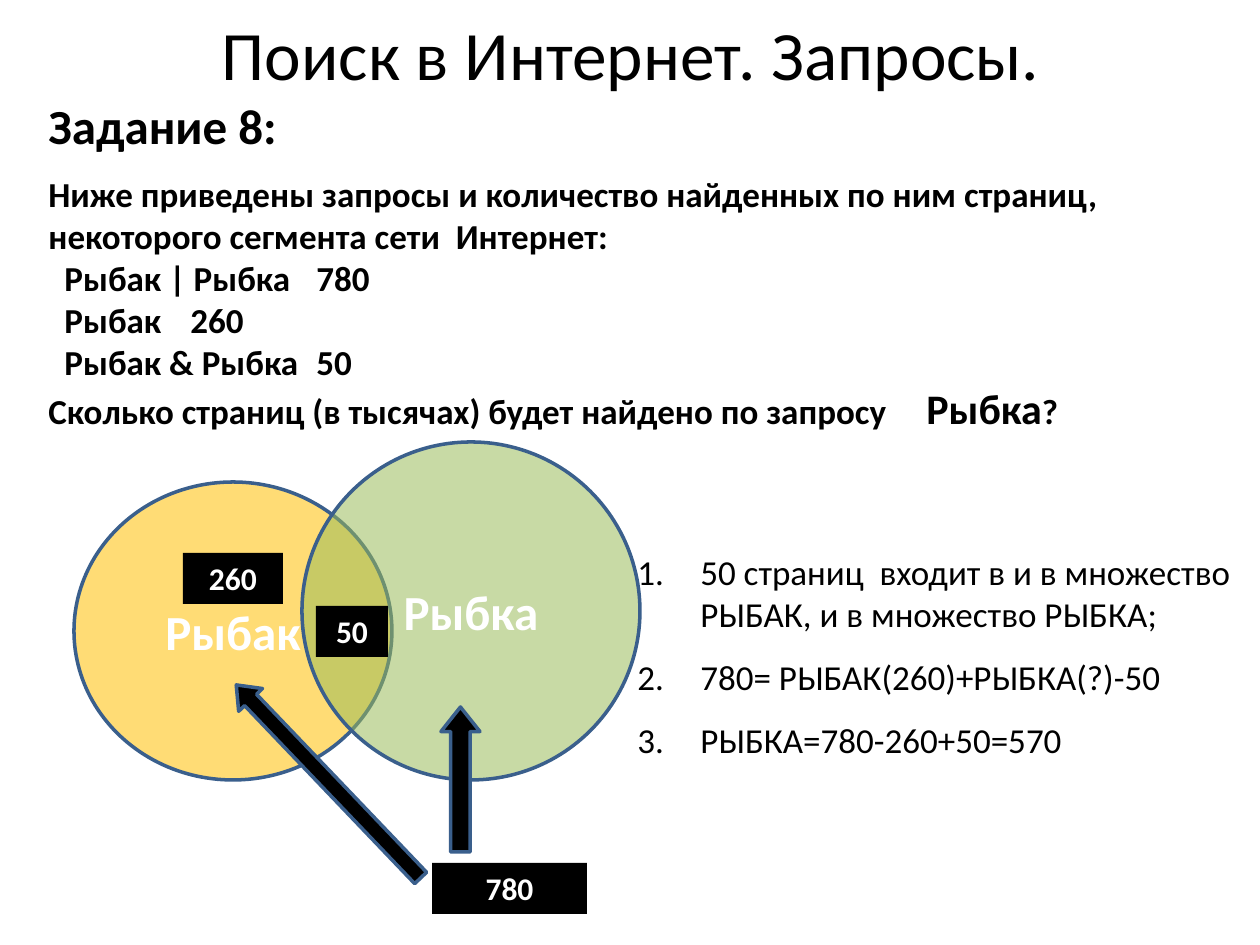
from lxml import etree
from pptx import Presentation
from pptx.dml.color import RGBColor
from pptx.enum.shapes import MSO_SHAPE
from pptx.enum.text import MSO_ANCHOR, PP_ALIGN
from pptx.oxml.ns import qn
from pptx.util import Emu, Pt

ELLIPSE, RECT, UP_ARROW = MSO_SHAPE.OVAL, MSO_SHAPE.RECTANGLE, MSO_SHAPE.UP_ARROW
TOP, MIDDLE = MSO_ANCHOR.TOP, MSO_ANCHOR.MIDDLE
LEFT, CENTER = PP_ALIGN.LEFT, PP_ALIGN.CENTER

FONT = "Calibri"
COLORS = {"black": "000000", "white": "FFFFFF", "outline": "3A5F8C",
          "yellow": "FFC000", "green": "9BBB59"}
PX_PER_INCH = 126


def px(length):
    return Emu(round(length * 914400 / PX_PER_INCH))


def color(name):
    return RGBColor.from_string(COLORS[name])


def format_paragraph(paragraph, size, bold=False, ink="black", align=LEFT):
    paragraph.alignment = align
    for run in paragraph.runs:
        run.font.name = FONT
        run.font.size = Pt(size)
        run.font.bold = bold
        run.font.color.rgb = color(ink)


def add_text(slide, box, lines, size, bold=False, align=LEFT, anchor=TOP, wrap=True):
    frame = slide.shapes.add_textbox(*map(px, box)).text_frame
    frame.word_wrap = wrap
    frame.vertical_anchor = anchor
    frame.text = "\n".join(lines)
    for paragraph in frame.paragraphs:
        format_paragraph(paragraph, size, bold, align=align)
    return frame


def add_figure(slide, kind, box, fill, outline=None, label="", size=18, anchor=MIDDLE):
    figure = slide.shapes.add_shape(kind, *map(px, box))
    figure.shadow.inherit = False
    figure.fill.solid()
    figure.fill.fore_color.rgb = color(fill)
    if outline:
        figure.line.color.rgb = color(outline)
        figure.line.width = Pt(2)
    else:
        figure.line.fill.background()
    if label:
        figure.text_frame.text = label
        figure.text_frame.vertical_anchor = anchor
        format_paragraph(figure.text_frame.paragraphs[0], size, True, "white", CENTER)
    return figure


def set_indent(paragraph, margin, first_line=0):
    properties = paragraph._p.get_or_add_pPr()
    properties.set("marL", str(px(margin)))
    properties.set("indent", str(px(first_line)))
    return properties


def add_tab_stop(paragraph, position):
    tabs = etree.SubElement(paragraph._p.get_or_add_pPr(), qn("a:tabLst"))
    etree.SubElement(tabs, qn("a:tab"), pos=str(px(position)), algn="l")


def set_opacity(figure, percent):
    fill_color = figure._element.spPr.find(qn("a:solidFill"))[0]
    etree.SubElement(fill_color, qn("a:alpha"), val=str(percent * 1000))


def add_heading(slide, x, y, width):
    add_text(slide, (x, y, width, 74), ["Поиск в Интернет. Запросы."], 39.6,
             align=CENTER, anchor=MIDDLE)


def add_task(slide, x, y, width):
    add_text(slide, (x, y, 257, 72), ["Задание 8:"], 28, bold=True, wrap=False)

    queries = [("Рыбак | Рыбка", 780), ("Рыбак", 260), ("Рыбак & Рыбка", 50)]
    lines = ["Ниже приведены запросы и количество найденных по ним страниц, "
             "некоторого сегмента сети  Интернет:"]
    lines += [f"{query}\t{pages}" for query, pages in queries]
    lines.append("Сколько страниц (в тысячах) будет найдено по запросу\t")
    frame = add_text(slide, (x, y + 77, width, 276), lines, 20, bold=True)

    # Query list: page counts line up on one tab stop
    for paragraph in frame.paragraphs[1:-1]:
        set_indent(paragraph, 16)
        add_tab_stop(paragraph, 378)

    # Question ends with the larger query word
    question = frame.paragraphs[-1]
    add_tab_stop(question, 878)
    for text in ("Рыбка", "?"):
        question.add_run().text = text
    format_paragraph(question, 20, bold=True)
    question.runs[-2].font.size = Pt(24)


def add_venn(slide, x, y):
    # Overlapping sets
    sets = [("Рыбак", (0, 40, 318, 298), "yellow"),
            ("Рыбка", (228, 0, 338, 338), "green")]
    for label, (left, top, width, height), fill in sets:
        ellipse = add_figure(slide, ELLIPSE, (x + left, y + top, width, height),
                             fill, "outline", label, 28)
        set_opacity(ellipse, 54)

    # Page counts
    counts = [("50", 242, 164, 72), ("260", 109, 111, 100), ("780", 358, 421, 155)]
    for label, left, top, width in counts:
        add_figure(slide, RECT, (x + left, y + top, width, 51), "black",
                   label=label, anchor=TOP)

    # Arrows from the total to both sets
    arrows = [((238, 206, 33, 267), 316.3), ((367, 265, 39, 145), 0)]
    for (left, top, width, height), angle in arrows:
        arrow = add_figure(slide, UP_ARROW, (x + left, y + top, width, height),
                           "black", "outline")
        arrow.adjustments[0] = 0.5
        arrow.adjustments[1] = 0.63
        arrow.rotation = angle


def add_solution(slide, x, y, width):
    steps = ["50 страниц  входит в и в множество РЫБАК, и в множество РЫБКА;",
             "780= РЫБАК(260)+РЫБКА(?)-50",
             "РЫБКА=780-260+50=570"]
    frame = add_text(slide, (x, y, width, 224), steps, 20)
    for paragraph in frame.paragraphs:
        paragraph.space_before = Pt(12)
        properties = set_indent(paragraph, 63, -63)
        etree.SubElement(properties, qn("a:buFont"), typeface="+mj-lt")
        etree.SubElement(properties, qn("a:buAutoNum"), type="arabicPeriod")


def main():
    presentation = Presentation()
    presentation.slide_width, presentation.slide_height = px(1260), px(945)
    slide = presentation.slides.add_slide(presentation.slide_layouts[6])
    add_heading(slide, 64, 16, 1134)
    add_task(slide, 36, 89, 1140)
    add_venn(slide, 74, 442)
    add_solution(slide, 625, 544, 620)
    presentation.save("out.pptx")


if __name__ == "__main__":
    main()
